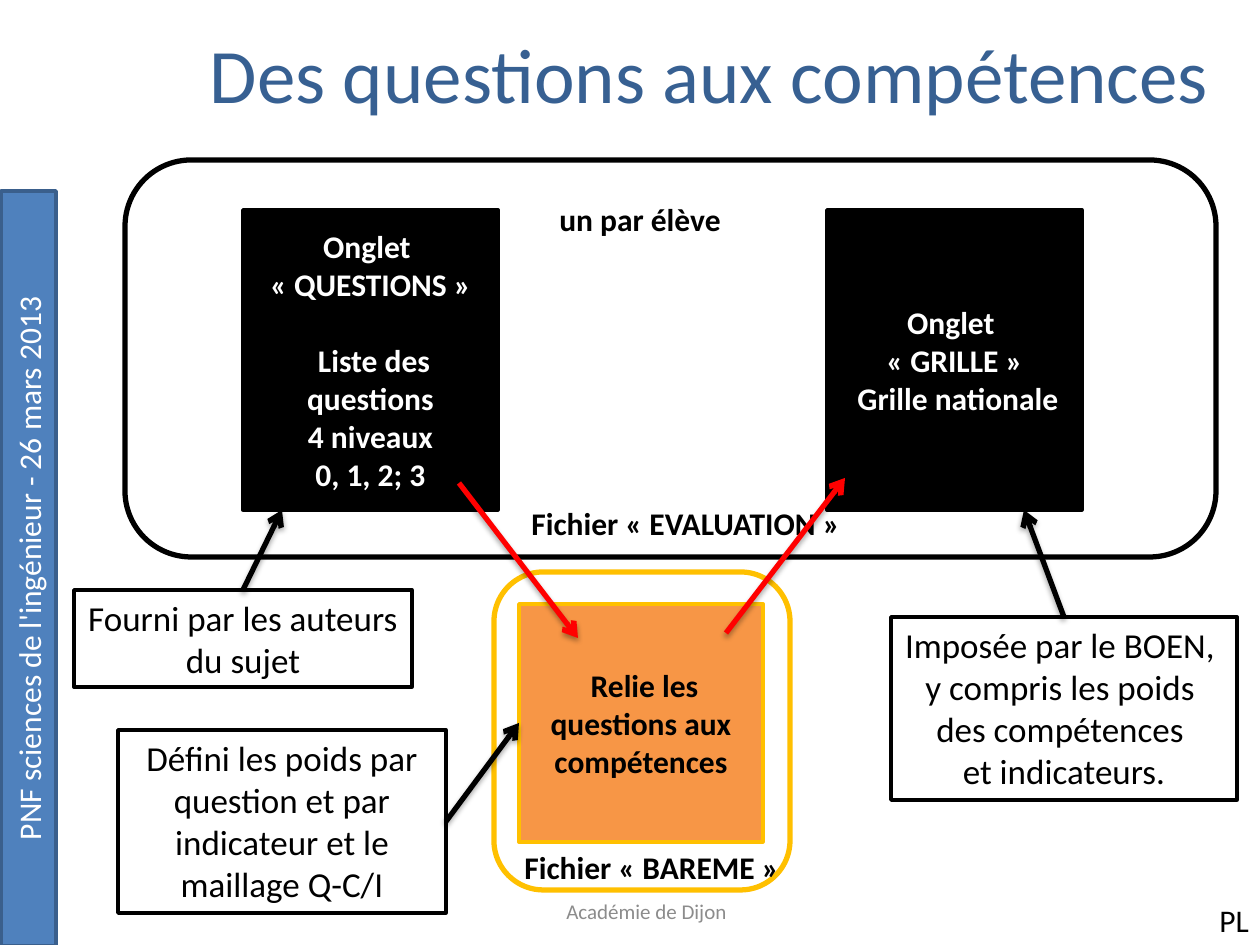
from lxml import etree
from pptx import Presentation
from pptx import util as u
from pptx.dml.color import RGBColor
from pptx.enum import shapes, text
from pptx.oxml import parse_xml
from pptx.oxml.ns import nsdecls, qn

PX = 914400 / 126
BLACK = RGBColor(0x00, 0x00, 0x00)
WHITE = RGBColor(0xFF, 0xFF, 0xFF)
GREY = RGBColor(0x8C, 0x8C, 0x8C)
RED = RGBColor(0xFF, 0x00, 0x00)
BLUE = RGBColor(0x4F, 0x81, 0xBD)
EDGE = RGBColor(0x3A, 0x5F, 0x8C)
NAVY = RGBColor(0x37, 0x60, 0x92)
ORANGE = RGBColor(0xF7, 0x96, 0x46)
GOLD = RGBColor(0xFF, 0xC0, 0x00)
RECT = shapes.MSO_SHAPE.RECTANGLE
ROUND = shapes.MSO_SHAPE.ROUNDED_RECTANGLE
MID, TOP = text.MSO_ANCHOR.MIDDLE, text.MSO_ANCHOR.TOP
LEFT, CENTER = text.PP_ALIGN.LEFT, text.PP_ALIGN.CENTER
SHADOW = (f'<a:effectLst {nsdecls("a")}><a:outerShdw blurRad="39370" dist="22860" '
          'dir="5400000" rotWithShape="0"><a:srgbClr val="000000">'
          '<a:alpha val="35000"/></a:srgbClr></a:outerShdw></a:effectLst>')


def emu(*nums):
    return [round(n * PX) for n in nums]


def write(shape, lines, size=18, color=BLACK, bold=False, align=CENTER,
          anchor=TOP, wrap=True, gaps=()):
    frame = shape.text_frame
    frame.word_wrap = wrap
    frame.vertical_anchor = anchor
    frame.text = lines
    for i, par in enumerate(frame.paragraphs):
        par.alignment = align
        if i in gaps:
            par.space_before = u.Pt(22)
        font = par.runs[0].font
        font.name, font.size, font.bold = "Calibri", u.Pt(size), bold
        font.color.rgb = color


prs = Presentation()
prs.slide_width, prs.slide_height = u.Inches(10), u.Inches(7.5)
slide = prs.slides.add_slide(prs.slide_layouts[5])
items = slide.shapes

# Title
title = items.title
title.left, title.top, title.width, title.height = emu(178, 20, 1063, 158)
write(title, "Des questions aux compétences", size=44, color=NAVY)

# Boxes: place, shape, fill, line, line width, text, text format
tab = dict(color=WHITE, bold=True, anchor=MID)
boxes = {
    "side": ((-349, 541, 755, 55), RECT, BLUE, EDGE, 2,
             "PNF sciences de l'ingénieur - 26 mars 2013",
             dict(color=WHITE, anchor=MID)),
    "quest": ((243, 210, 255, 300), RECT, BLACK, BLACK, 2,
              "Onglet \n« QUESTIONS »\n Liste des questions\n4 niveaux\n0, 1, 2; 3",
              dict(tab, gaps=(2,))),
    "bareme": ((519, 604, 244, 238), RECT, ORANGE, GOLD, 2,
               " Relie les questions aux compétences", dict(tab, color=BLACK)),
    "grid": ((827, 210, 255, 300), RECT, BLACK, BLACK, 2,
             "Onglet \n« GRILLE »\n Grille nationale", tab),
    "author": ((74, 590, 338, 97), RECT, WHITE, BLACK, 2,
               "Fourni par les auteurs\ndu sujet", dict(size=20, wrap=False)),
    "boen": ((891, 617, 346, 183), RECT, WHITE, BLACK, 2,
             "Imposée par le BOEN, \ny compris les poids \ndes compétences \net indicateurs.",
             dict(size=20, wrap=False)),
    "weight": ((118, 730, 328, 183), RECT, WHITE, BLACK, 2,
               "Défini les poids par question et par indicateur et le maillage Q-C/I",
               dict(size=20)),
    "eval file": ((125, 160, 1091, 397), ROUND, None, BLACK, 3, "", {}),
    "bareme file": ((494, 572, 296, 318), ROUND, None, GOLD, 3, "", {}),
}
made = {}
for name, (place, kind, fill, edge, width, words, style) in boxes.items():
    box = made[name] = items.add_shape(kind, *emu(*place))
    box.shadow.inherit = False
    if fill is None:
        box.fill.background()
    else:
        box.fill.solid()
        box.fill.fore_color.rgb = fill
    box.line.color.rgb = edge
    box.line.width = u.Pt(width)
    if words:
        write(box, words, **style)
made["side"].rotation = 270

# Free labels
label = dict(bold=True, align=LEFT, wrap=False)
for place, words, style in (
    ((447, 886, 399, 50), "Académie de Dijon", dict(size=12, color=GREY, anchor=MID)),
    ((519, 498, 336, 50), "Fichier « EVALUATION »", label),
    ((512, 842, 282, 50), "Fichier « BAREME »", label),
    ((547, 194, 188, 50), "un par élève", label),
    ((1207, 895, 55, 50), "PL", dict(label, bold=False)),
):
    write(items.add_textbox(*emu(*place)), words, **style)

# Arrows: ends, colour, joined start and end
for ends, color, start, stop in (
    ((459, 483, 578, 638), RED, None, None),
    ((726, 633, 845, 478), RED, None, None),
    ((243, 590, 282, 510), BLACK, ("author", 0), None),
    ((446, 821, 519, 723), BLACK, ("weight", 3), ("bareme", 1)),
    ((1064, 617, 1024, 510), BLACK, ("boen", 0), None),
):
    arrow = items.add_connector(shapes.MSO_CONNECTOR.STRAIGHT, *emu(*ends))
    if start:
        arrow.begin_connect(made[start[0]], start[1])
    if stop:
        arrow.end_connect(made[stop[0]], stop[1])
    arrow.line.color.rgb = color
    arrow.line.width = u.Pt(3)
    etree.SubElement(arrow.line._get_or_add_ln(), qn("a:tailEnd"), type="arrow")
    arrow._element.spPr.append(parse_xml(SHADOW))

prs.save("out.pptx")
